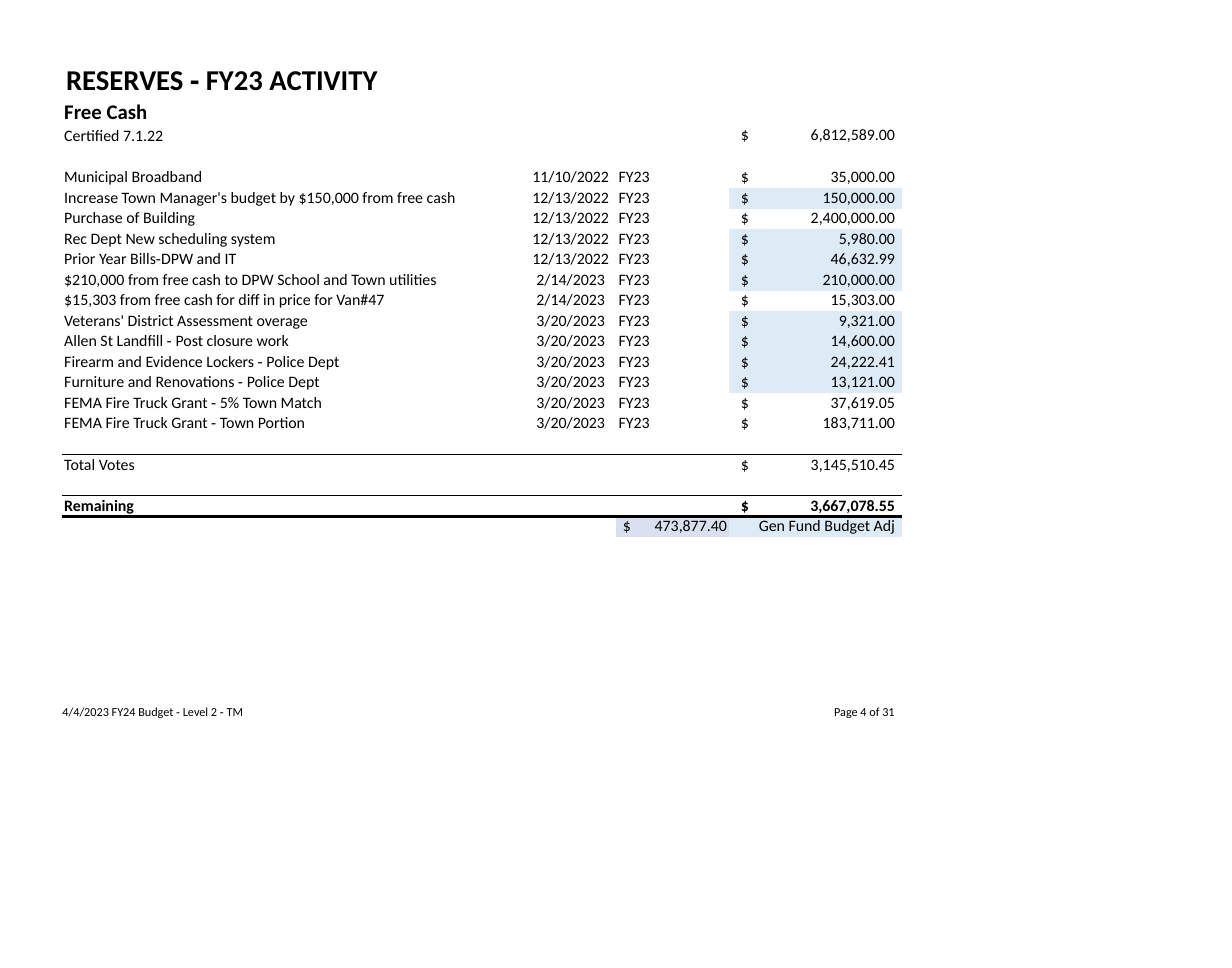
"""Build the FY23 reserves activity slide: free cash votes, totals and remaining balance."""
from dataclasses import dataclass

from lxml import etree
from pptx import Presentation
from pptx import util as u
from pptx.dml.color import RGBColor
from pptx.enum import text
from pptx.oxml import ns


@dataclass(frozen=True)
class Theme:
    """Colours, font and type sizes of the slide."""
    font: str = "Calibri"
    ink: str = "000000"
    budget_blue: str = "DDEBF7"
    total_blue: str = "D9E1F1"
    title: float = 23.5
    heading: float = 17
    body: float = 13
    footer: float = 10
    thin: float = 1
    thick: float = 2.25


THEME = Theme()
LEFT, TABLE_TOP, ROW = 0.7, 0.81, 16.8 / 72
COLUMNS = (4.96, 1.34, 1.29, 1.96)
LABEL, DATE, YEAR, AMOUNT = range(4)
INDENT, EDGE = 0.03, 0.08
VOTES = (
    ("Municipal Broadband", "11/10/2022", "35,000.00", False),
    ("Increase Town Manager's budget by $150,000 from free cash", "12/13/2022", "150,000.00", True),
    ("Purchase of Building", "12/13/2022", "2,400,000.00", False),
    ("Rec Dept New scheduling system", "12/13/2022", "5,980.00", True),
    ("Prior Year Bills‐DPW and IT", "12/13/2022", "46,632.99", True),
    ("$210,000 from free cash to DPW School and Town utilities", "2/14/2023", "210,000.00", True),
    ("$15,303 from free cash for diff in price for Van#47", "2/14/2023", "15,303.00", False),
    ("Veterans' District Assessment overage", "3/20/2023", "9,321.00", True),
    ("Allen St Landfill ‐ Post closure work", "3/20/2023", "14,600.00", True),
    ("Firearm and Evidence Lockers ‐ Police Dept", "3/20/2023", "24,222.41", True),
    ("Furniture and Renovations ‐ Police Dept", "3/20/2023", "13,121.00", True),
    ("FEMA Fire Truck Grant ‐ 5% Town Match", "3/20/2023", "37,619.05", False),
    ("FEMA Fire Truck Grant ‐ Town Portion", "3/20/2023", "183,711.00", False),
)
ROW_UNITS = (1.55, 2.75, 1.4) + (1,) * (len(VOTES) - 2) + (2, 2, 1, 1)
TITLE, OPENING, FIRST_VOTE = range(3)
TOTAL = FIRST_VOTE + len(VOTES)
REMAINING, ADJUSTMENT = TOTAL + 1, TOTAL + 2


def style(paragraph, size, bold=False):
    """Give every run of a paragraph the slide's font, colour and a size."""
    for run in paragraph.runs:
        run.font.name = THEME.font
        run.font.size = u.Pt(size)
        run.font.bold = bold
        run.font.color.rgb = RGBColor.from_string(THEME.ink)


def write_footer(slide, wording, left, width):
    """Add one line of footer text."""
    frame = slide.shapes.add_textbox(
        u.Inches(left), u.Inches(8), u.Inches(width), u.Inches(0.2)).text_frame
    frame.word_wrap = True
    frame.margin_left = frame.margin_top = frame.margin_right = frame.margin_bottom = 0
    frame.text = wording
    style(frame.paragraphs[0], THEME.footer)


def fill_cell(cell, wording, left=INDENT, right=0, top=0, align=text.PP_ALIGN.LEFT, bold=False):
    """Write a table cell's text with its insets and alignment."""
    cell.margin_left, cell.margin_right = u.Inches(left), u.Inches(right)
    cell.margin_top = u.Inches(top)
    cell.text_frame.text = wording
    for paragraph in cell.text_frame.paragraphs:
        paragraph.alignment = align
        style(paragraph, THEME.body, bold)


def fill_money(cell, amount, width, left=0.13, right=EDGE, top=0, bold=False):
    """Write a dollar sign at the left and an amount at a right tab stop."""
    fill_cell(cell, f"$\t{amount}", left=left, top=top, bold=bold)
    properties = cell.text_frame.paragraphs[0]._p.get_or_add_pPr()
    stops = etree.SubElement(properties, ns.qn("a:tabLst"))
    stop = u.Inches(width - left - right)
    etree.SubElement(stops, ns.qn("a:tab"), pos=str(int(stop)), algn="r")


def shade(cell, colour):
    """Fill a cell with a solid colour."""
    cell.fill.solid()
    cell.fill.fore_color.rgb = RGBColor.from_string(colour)


def rule_cell(cell, side, weight):
    """Draw a cell's top (lnT) or bottom (lnB) border."""
    line = etree.SubElement(cell._tc.get_or_add_tcPr(), ns.qn(f"a:{side}"), w=str(int(u.Pt(weight))))
    solid = etree.SubElement(line, ns.qn("a:solidFill"))
    etree.SubElement(solid, ns.qn("a:srgbClr"), val=THEME.ink)


def add_ledger(slide):
    """Add the plain table with its grid, rules and small empty cells."""
    frame = slide.shapes.add_table(
        len(ROW_UNITS), len(COLUMNS), u.Inches(LEFT), u.Inches(TABLE_TOP),
        u.Inches(sum(COLUMNS)), u.Inches(sum(ROW_UNITS) * ROW))
    ledger = frame.table
    ledger.first_row = ledger.horz_banding = False
    style_id = ledger._tbl.tblPr.find(ns.qn("a:tableStyleId"))
    style_id.text = "{2D5ABB26-0587-4C30-8999-92F81FD0307C}"
    for column, width in zip(ledger.columns, COLUMNS):
        column.width = u.Inches(width)
    rules = {TOTAL - 1: THEME.thin, TOTAL: THEME.thin, REMAINING: THEME.thick}
    for index, (row, units) in enumerate(zip(ledger.rows, ROW_UNITS)):
        row.height = u.Inches(units * ROW)
        for cell in row.cells:
            cell.margin_left = cell.margin_right = cell.margin_top = cell.margin_bottom = 0
            for side, edge in (("lnT", index - 1), ("lnB", index)):
                if edge in rules:
                    rule_cell(cell, side, rules[edge])
            cell.fill.background()
            etree.SubElement(cell.text_frame.paragraphs[0]._p, ns.qn("a:endParaRPr"),
                             sz=str(THEME.body * 100))
    return ledger


def write_opening(ledger):
    """Write the title row, the free cash heading and the certified balance."""
    title = ledger.cell(TITLE, LABEL)
    ledger.cell(TITLE, DATE).merge(ledger.cell(TITLE, AMOUNT))
    fill_cell(title, "RESERVES ‐ FY23 ACTIVITY", left=0.05)
    title.text_frame.paragraphs[0].line_spacing = u.Pt(22.4)
    style(title.text_frame.paragraphs[0], THEME.title, bold=True)
    heading = ledger.cell(OPENING, LABEL)
    fill_cell(heading, "Free Cash\nCertified 7.1.22")
    free_cash, certified = heading.text_frame.paragraphs
    free_cash.line_spacing = u.Pt(18.2)
    style(free_cash, THEME.heading, bold=True)
    certified.space_before = u.Pt(1.1)
    fill_money(ledger.cell(OPENING, AMOUNT), "6,812,589.00", COLUMNS[AMOUNT], top=0.25)


def write_votes(ledger):
    """Write one row for each vote, shading the budget adjustments."""
    for row, (label, date, amount, adjusts_budget) in enumerate(VOTES, start=FIRST_VOTE):
        top = 0.09 if row == FIRST_VOTE else 0
        fill_cell(ledger.cell(row, LABEL), label, top=top)
        fill_cell(ledger.cell(row, DATE), date, left=0.31, top=top, align=text.PP_ALIGN.CENTER)
        fill_cell(ledger.cell(row, YEAR), "FY23", top=top)
        fill_money(ledger.cell(row, AMOUNT), amount, COLUMNS[AMOUNT], top=top)
        if adjusts_budget:
            shade(ledger.cell(row, AMOUNT), THEME.budget_blue)


def write_totals(ledger):
    """Write the total, the remaining balance and the budget adjustment."""
    for row, label, amount, bold in ((TOTAL, "Total Votes", "3,145,510.45", False),
                                     (REMAINING, "Remaining", "3,667,078.55", True)):
        fill_cell(ledger.cell(row, LABEL), label, bold=bold)
        fill_money(ledger.cell(row, AMOUNT), amount, COLUMNS[AMOUNT], bold=bold)
    adjustment, caption = ledger.cell(ADJUSTMENT, YEAR), ledger.cell(ADJUSTMENT, AMOUNT)
    fill_money(adjustment, "473,877.40", COLUMNS[YEAR], left=EDGE, right=INDENT)
    shade(adjustment, THEME.total_blue)
    fill_cell(caption, "Gen Fund Budget Adj", right=EDGE, align=text.PP_ALIGN.RIGHT)
    shade(caption, THEME.budget_blue)


def main():
    """Build and save the slide."""
    deck = Presentation()
    deck.slide_width, deck.slide_height = u.Inches(14), u.Inches(11)
    slide = deck.slides.add_slide(deck.slide_layouts[6])
    ledger = add_ledger(slide)
    write_opening(ledger)
    write_votes(ledger)
    write_totals(ledger)
    write_footer(slide, "4/4/2023 FY24 Budget ‐ Level 2 ‐ TM", 0.71, 2.18)
    write_footer(slide, "Page 4 of 31", 9.48, 0.84)
    deck.save("out.pptx")


if __name__ == "__main__":
    main()
